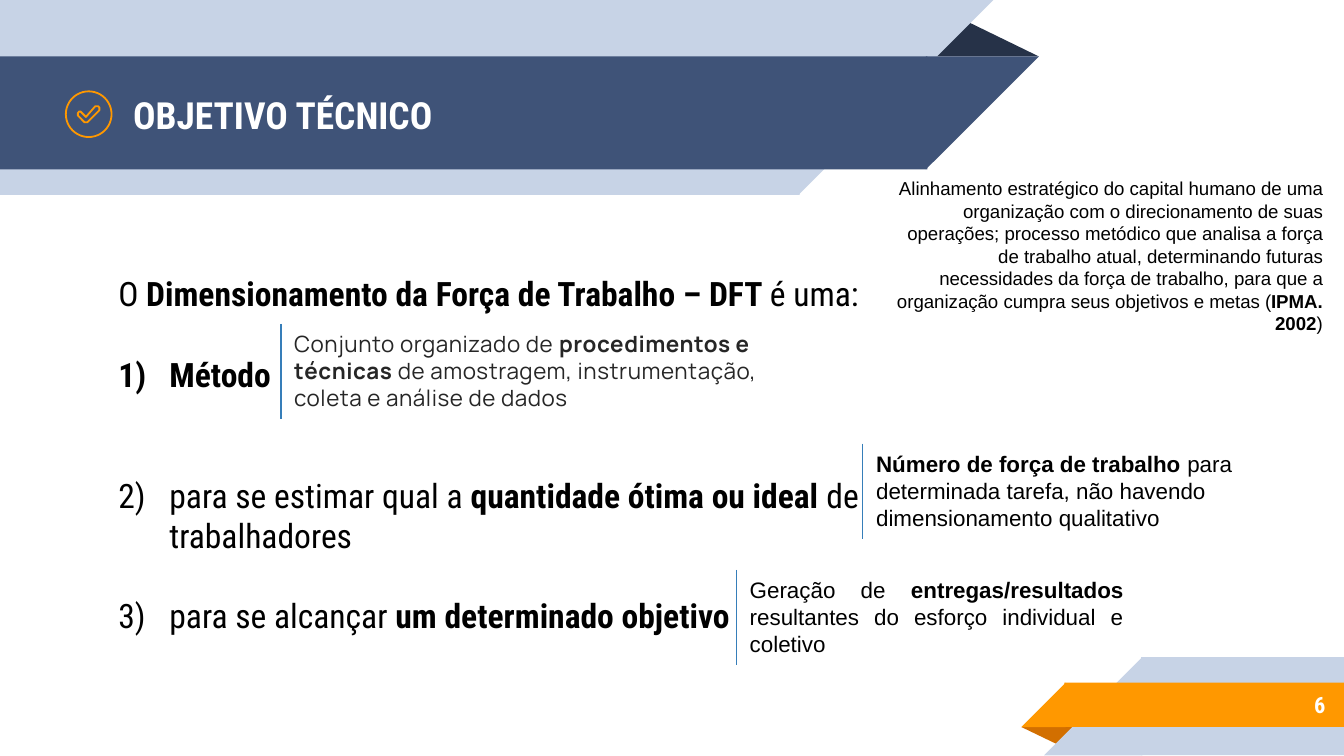
from dataclasses import dataclass

from lxml.etree import SubElement
from pptx import Presentation
from pptx.dml.color import RGBColor
from pptx.enum.shapes import MSO_CONNECTOR, MSO_SHAPE as Shape
from pptx.enum.text import MSO_ANCHOR as Anchor, MSO_AUTO_SIZE as AutoSize, PP_ALIGN as Align
from pptx.oxml.ns import qn
from pptx.util import Inches, Pt


@dataclass(frozen=True)
class Theme:
    pale: str = "C7D3E6"
    navy: str = "3F5378"
    navy_fold: str = "263248"
    orange: str = "FF9800"
    orange_fold: str = "D26F00"
    rule: str = "367EB9"
    ink: str = "000000"
    soft_ink: str = "262626"
    white: str = "FFFFFF"
    heading_font: str = "Roboto Condensed"
    note_font: str = "Arial"
    method_font: str = "Manrope"
    title_size: float = 20
    list_size: float = 18
    note_size: float = 12
    quote_size: float = 10
    list_gap: float = 21.6


THEME = Theme()


def rgb(color):
    return RGBColor.from_string(color)


def add_runs(paragraph, runs, font, size, color=THEME.ink, tracking=None):
    """Add (text, bold) pairs as runs; tracking is in hundredths of a point."""
    for text, bold in runs:
        run = paragraph.add_run()
        run.text = text
        run.font.name = font
        run.font.size = Pt(size)
        run.font.bold = bold
        run.font.color.rgb = rgb(color)
        if tracking:
            run.font._element.set("spc", str(tracking))


def place(shape, left, top, width, height):
    shape.left, shape.top = Inches(left), Inches(top)
    shape.width, shape.height = Inches(width), Inches(height)


def bring_to_front(shape):
    shape.element.getparent().append(shape.element)


def set_margins(frame, margin):
    frame.margin_left = frame.margin_right = Inches(margin)
    frame.margin_top = frame.margin_bottom = Inches(margin)


def add_piece(group, kind, box, color, rotation=0, flip=False):
    piece = group.shapes.add_shape(kind, *map(Inches, box))
    piece.shadow.inherit = False
    piece.fill.solid()
    piece.fill.fore_color.rgb = rgb(color)
    piece.line.fill.background()
    piece.rotation = rotation
    if flip:
        piece.element.spPr.xfrm.set("flipH", "1")
    return piece


def add_fold(group, box, color, rotation=0):
    fold = add_piece(group, Shape.ISOSCELES_TRIANGLE, box, color, rotation)
    fold.adjustments[0] = 0.324


def add_band(group, left, top, length, height, color, slant_left=False):
    """Draw a bar with a slanted end, overlapping the two parts slightly to hide the seam."""
    overlap = 0.01
    rotation = 0 if slant_left else 180
    bar_left = left + height - overlap if slant_left else left
    slant = left if slant_left else left + length
    bar = (bar_left, top, length + overlap, height)
    add_piece(group, Shape.RECTANGLE, bar, color, rotation, True)
    add_piece(group, Shape.RIGHT_TRIANGLE, (slant, top, height, height), color, rotation, True)


def add_ribbons(slide):
    header = slide.shapes.add_group_shape()
    add_fold(header, (6.88, 0.14, 0.85, 0.28), THEME.navy_fold)
    add_band(header, 0, 0, 5.94, 1.45, THEME.pale)
    add_band(header, 0, 0.42, 6.89, 0.84, THEME.navy)

    footer = slide.shapes.add_group_shape()
    add_fold(footer, (7.6, 5.41, 0.43, 0.14), THEME.orange_fold, 180)
    add_band(footer, 7.77, 4.89, 1.5, 0.73, THEME.pale, slant_left=True)
    add_band(footer, 7.6, 5.08, 2.07, 0.33, THEME.orange, slant_left=True)


def add_check_icon(slide):
    ring = slide.shapes.add_shape(Shape.OVAL, *map(Inches, (0.49, 0.68, 0.34, 0.34)))
    # Tick outline in hundredths of an inch
    outline = [(65, 91), (74, 82), (74, 80), (73, 79), (71, 79), (64, 87), (61, 84),
               (60, 83), (59, 83), (58, 84), (58, 86), (63, 91), (64, 91)]
    builder = slide.shapes.build_freeform(*outline[0], scale=Inches(0.01))
    builder.add_line_segments(outline[1:], close=True)
    for part in (ring, builder.convert_to_shape()):
        part.shadow.inherit = False
        part.fill.background()
        part.line.color.rgb = rgb(THEME.orange)
        part.line.width = Pt(0.96)


def set_title(slide, text):
    title = slide.shapes.title
    place(title, 0.89, 0.43, 5.75, 0.84)
    frame = title.text_frame
    frame.auto_size = AutoSize.NONE
    frame.vertical_anchor = Anchor.MIDDLE
    set_margins(frame, 0.1)
    frame.paragraphs[0].alignment = Align.LEFT
    add_runs(frame.paragraphs[0], [(text, True)], THEME.heading_font, THEME.title_size, THEME.white)
    bring_to_front(title)


def set_bullet(paragraph, numbered):
    properties = paragraph._p.get_or_add_pPr()
    margin, indent = (0.49, -0.38) if numbered else (0.11, 0)
    properties.set("marL", str(Inches(margin)))
    properties.set("indent", str(Inches(indent)))
    if numbered:
        color = SubElement(properties, qn("a:buClr"))
        SubElement(color, qn("a:srgbClr"), val=THEME.ink)
        SubElement(properties, qn("a:buFont"), typeface=THEME.heading_font)
        SubElement(properties, qn("a:buAutoNum"), type="arabicParenR")
    else:
        SubElement(properties, qn("a:buNone"))


def set_definition(slide, items):
    """Fill the body with (runs, numbered, lines of space before) items."""
    body = slide.placeholders[1]
    place(body, 0.67, 1.98, 6.3, 3.64)
    frame = body.text_frame
    frame.auto_size = AutoSize.NONE
    frame.vertical_anchor = Anchor.TOP
    for index, (runs, numbered, gap) in enumerate(items):
        paragraph = frame.add_paragraph() if index else frame.paragraphs[0]
        set_bullet(paragraph, numbered)
        paragraph.alignment = Align.LEFT
        paragraph.line_spacing = 1.0
        paragraph.space_before = Pt(gap * THEME.list_gap)
        add_runs(paragraph, runs, THEME.heading_font, THEME.list_size)
    bring_to_front(body)


def add_text(slide, box, runs, font, size, color=THEME.ink, align=Align.LEFT, tracking=None):
    label = slide.shapes.add_textbox(*map(Inches, box))
    frame = label.text_frame
    frame.word_wrap = True
    frame.paragraphs[0].alignment = align
    add_runs(frame.paragraphs[0], runs, font, size, color, tracking)
    return frame


def add_note(slide, left, top, width, runs, font=THEME.note_font, **style):
    """Add an explanation with a thin rule along its left edge."""
    height = 0.71
    frame = add_text(slide, (left, top, width, height), runs, font, THEME.note_size, **style)
    frame.auto_size = AutoSize.SHAPE_TO_FIT_TEXT
    ends = map(Inches, (left, top, left, top + height))
    rule = slide.shapes.add_connector(MSO_CONNECTOR.STRAIGHT, *ends)
    rule.line.color.rgb = rgb(THEME.rule)
    rule.line.width = Pt(0.75)
    SubElement(rule.element.spPr, qn("a:effectLst"))


def main():
    deck = Presentation()
    deck.slide_width = Inches(10)
    deck.slide_height = deck.slide_width * 9 // 16
    slide = deck.slides.add_slide(deck.slide_layouts[1])

    add_ribbons(slide)
    set_title(slide, "OBJETIVO TÉCNICO")
    page = add_text(slide, (8.33, 5.07, 1.63, 0.35), [("6", True)], THEME.heading_font,
                    THEME.note_size, THEME.white, Align.RIGHT)
    page.vertical_anchor = Anchor.MIDDLE
    set_margins(page, 0.1)
    add_check_icon(slide)

    set_definition(slide, [
        ([("O ", False), ("Dimensionamento da Força de Trabalho – DFT ", True),
          ("é uma:", False)], False, 0),
        ([("Método", True)], True, 1),
        ([("para se estimar qual a ", False), ("quantidade ótima ou ideal ", True),
          ("de trabalhadores", False)], True, 2),
        ([("para se alcançar ", False), ("um determinado objetivo", True)], True, 1),
    ])
    add_note(slide, 2.09, 2.41, 3.7, [
        ("Conjunto organizado de ", False), ("procedimentos e técnicas ", True),
        ("de amostragem, instrumentação, coleta e análise de dados", False),
    ], THEME.method_font, color=THEME.soft_ink, tracking=30)
    add_note(slide, 6.42, 3.3, 3.19, [
        ("Número de força de trabalho ", True),
        ("para determinada tarefa, não havendo dimensionamento qualitativo", False),
    ])
    add_note(slide, 5.48, 4.24, 2.98, [
        ("Geração de ", False), ("entregas/resultados ", True),
        ("resultantes do esforço individual e coletivo", False),
    ], align=Align.JUSTIFY)
    quote = add_text(slide, (6.56, 1.27, 3.38, 1.28), [
        ("Alinhamento estratégico do capital humano de uma organização com o direcionamento "
         "de suas operações; processo metódico que analisa a força de trabalho atual, "
         "determinando futuras necessidades da força de trabalho, para que a organização "
         "cumpra seus objetivos e metas (", False),
        ("IPMA. 2002", True), (")", False),
    ], THEME.note_font, THEME.quote_size, align=Align.RIGHT)
    quote.auto_size = AutoSize.SHAPE_TO_FIT_TEXT
    deck.save("out.pptx")


if __name__ == "__main__":
    main()
